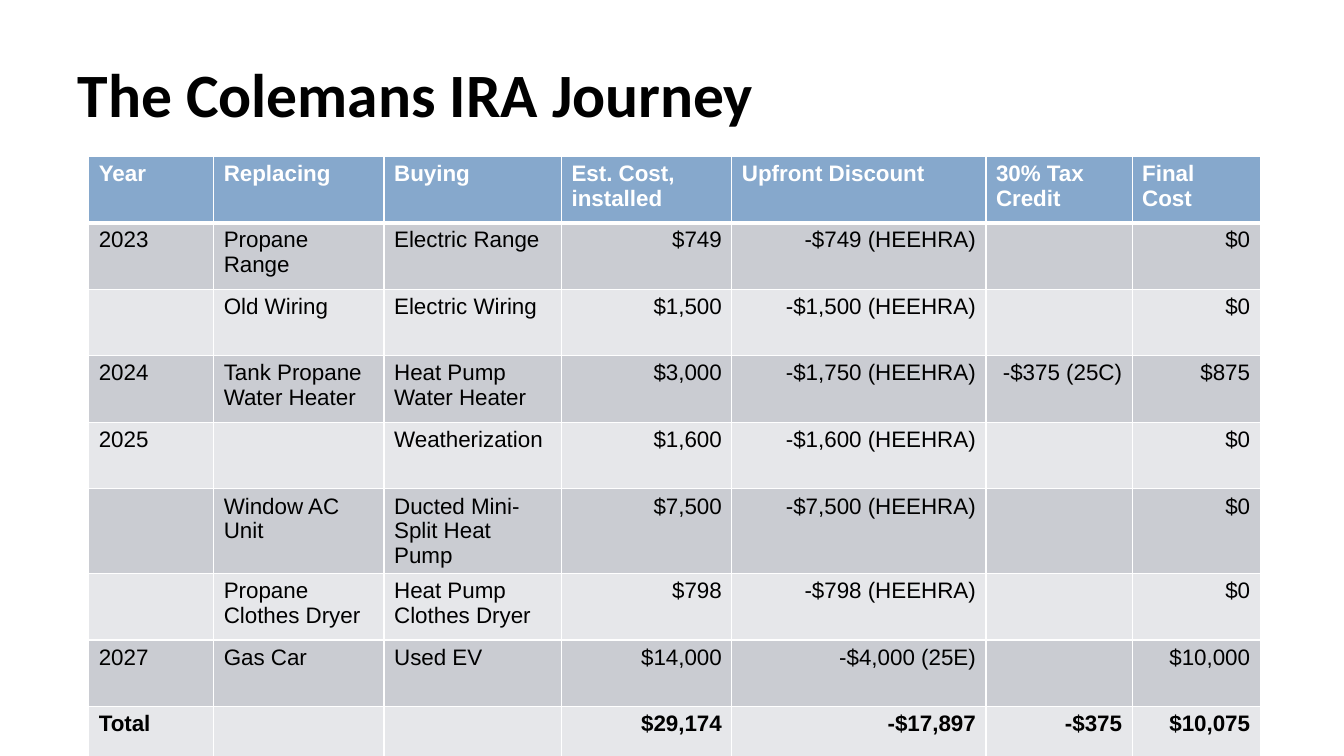
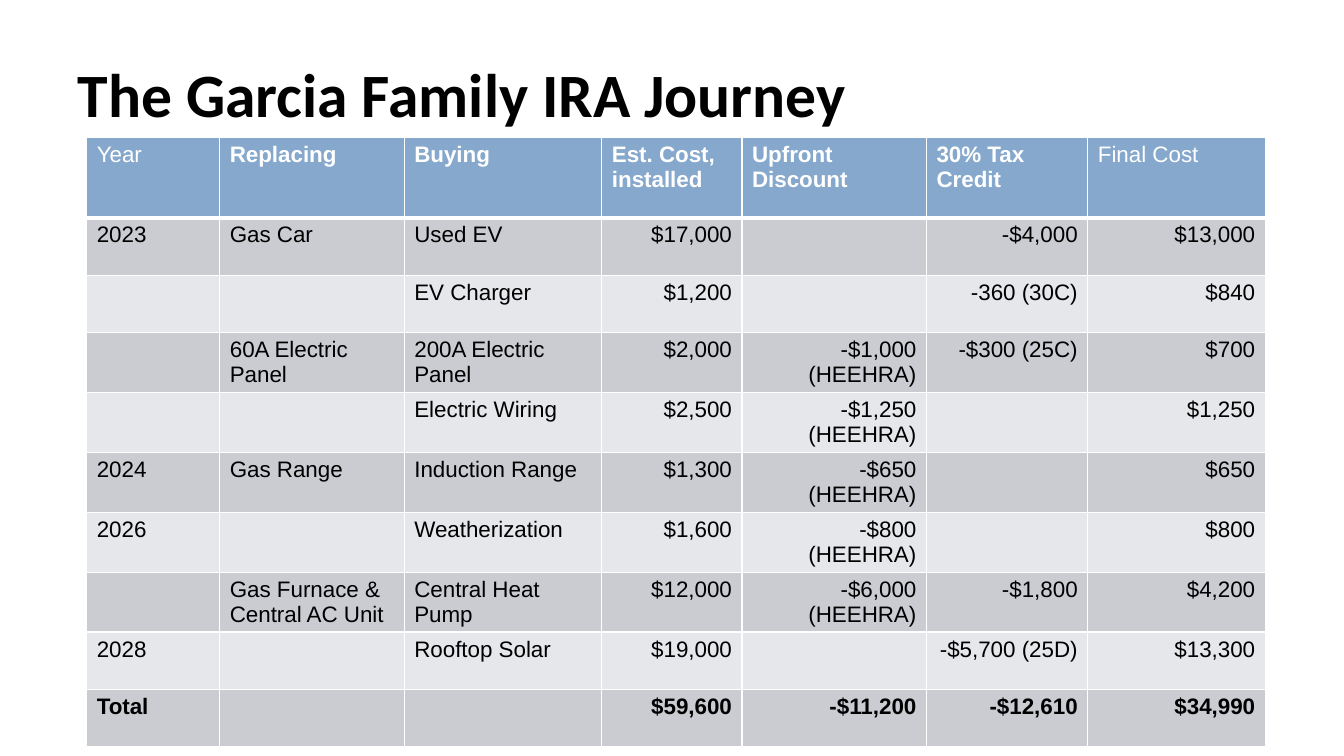
from lxml import etree
from pptx import Presentation
from pptx.dml.color import RGBColor
from pptx.enum.text import MSO_ANCHOR, PP_ALIGN
from pptx.oxml.ns import qn
from pptx.util import Inches, Pt

LEFT, RIGHT = PP_ALIGN.LEFT, PP_ALIGN.RIGHT
MIDDLE = MSO_ANCHOR.MIDDLE

# Shared colours and styles
WHITE = RGBColor(0xFF, 0xFF, 0xFF)
BLACK = RGBColor(0x00, 0x00, 0x00)
HEADER_BLUE = RGBColor(0x86, 0xA8, 0xCC)
BANDS = [RGBColor(0xCA, 0xCC, 0xD2), RGBColor(0xE6, 0xE7, 0xEA)]
TITLE_FONT = {"name": "Calibri", "size": Pt(44), "bold": True}
CELL_FONT = {"name": "Arial", "size": Pt(16)}
TITLE_BOX = {"left": Inches(0.67), "top": Inches(0.3),
             "width": Inches(12), "height": Inches(1.25)}
TITLE_FRAME = {"vertical_anchor": MIDDLE, "word_wrap": True,
               "margin_top": Inches(0.1), "margin_bottom": Inches(0.1)}
THIN, THICK = 1, 3
FIRST_NUMBER_COLUMN = 3

# Content
HEADINGS = ("Year", "Replacing", "Buying", "Est. Cost, installed",
            "Upfront Discount", "30% Tax Credit", "Final Cost")
JOURNEYS = [
    {
        "title": "The Colemans IRA Journey",
        "left": 0.88, "top": 1.55,
        "columns": (1.24, 1.69, 1.76, 1.69, 2.52, 1.45, 1.27),
        "header_height": 0.66, "row_height": 0.66,
        "plain_headings": (),
        "rows": [
            ("2023", "Propane Range", "Electric Range", "$749", "-$749 (HEEHRA)", "", "$0"),
            ("", "Old Wiring", "Electric Wiring", "$1,500", "-$1,500 (HEEHRA)", "", "$0"),
            ("2024", "Tank Propane Water Heater", "Heat Pump Water Heater",
             "$3,000", "-$1,750 (HEEHRA)", "-$375 (25C)", "$875"),
            ("2025", "", "Weatherization", "$1,600", "-$1,600 (HEEHRA)", "", "$0"),
            ("", "Window AC Unit", "Ducted Mini-Split Heat Pump",
             "$7,500", "-$7,500 (HEEHRA)", "", "$0"),
            ("", "Propane Clothes Dryer", "Heat Pump Clothes Dryer",
             "$798", "-$798 (HEEHRA)", "", "$0"),
            ("2027", "Gas Car", "Used EV", "$14,000", "-$4,000 (25E)", "", "$10,000"),
            ("Total", "", "", "$29,174", "-$17,897", "-$375", "$10,075"),
        ],
    },
    {
        "title": "The Garcia Family IRA Journey",
        "left": 0.86, "top": 1.36,
        "columns": (1.32, 1.83, 1.96, 1.39, 1.83, 1.6, 1.76),
        "header_height": 0.8, "row_height": 0.57,
        "plain_headings": ("Year", "Final Cost"),
        "rows": [
            ("2023", "Gas Car", "Used EV", "$17,000", "", "-$4,000", "$13,000"),
            ("", "", "EV Charger", "$1,200", "", "-360 (30C)", "$840"),
            ("", "60A Electric Panel", "200A Electric Panel",
             "$2,000", "-$1,000 (HEEHRA)", "-$300 (25C)", "$700"),
            ("", "", "Electric Wiring", "$2,500", "-$1,250 (HEEHRA)", "", "$1,250"),
            ("2024", "Gas Range", "Induction Range", "$1,300", "-$650 (HEEHRA)", "", "$650"),
            ("2026", "", "Weatherization", "$1,600", "-$800 (HEEHRA)", "", "$800"),
            ("", "Gas Furnace & Central AC Unit", "Central Heat Pump",
             "$12,000", "-$6,000 (HEEHRA)", "-$1,800", "$4,200"),
            ("2028", "", "Rooftop Solar", "$19,000", "", "-$5,700 (25D)", "$13,300"),
            ("Total", "", "", "$59,600", "-$11,200", "-$12,610", "$34,990"),
        ],
    },
]


def apply(target, values):
    for name, value in values.items():
        setattr(target, name, value)


def set_borders(cell, top, bottom):
    """Draw white cell borders; must run before the fill is set."""
    properties = cell._tc.get_or_add_tcPr()
    widths = {"a:lnL": THIN, "a:lnR": THIN, "a:lnT": top, "a:lnB": bottom}
    for tag, points in widths.items():
        line = etree.SubElement(properties, qn(tag), w=str(Pt(points)))
        fill = etree.SubElement(line, qn("a:solidFill"))
        etree.SubElement(fill, qn("a:srgbClr"), val=str(WHITE))


def write_text(text_frame, text, font, color, alignment):
    text_frame.text = text
    paragraph = text_frame.paragraphs[0]
    paragraph.alignment = alignment
    for run in paragraph.runs:
        apply(run.font, font)
        run.font.color.rgb = color


def add_cost_table(slide, journey):
    rows = [HEADINGS] + journey["rows"]
    columns = journey["columns"]
    heights = [journey["header_height"]] + [journey["row_height"]] * len(journey["rows"])
    table = slide.shapes.add_table(
        len(rows), len(columns), Inches(journey["left"]), Inches(journey["top"]),
        Inches(sum(columns)), Inches(sum(heights))).table
    table.horz_banding = False
    for column, width in zip(table.columns, columns):
        column.width = Inches(width)
    for row, height in zip(table.rows, heights):
        row.height = Inches(height)

    for row_index, texts in enumerate(rows):
        header = row_index == 0
        for column_index, text in enumerate(texts):
            cell = table.cell(row_index, column_index)
            set_borders(cell, THICK if row_index == 1 else THIN, THICK if header else THIN)
            cell.fill.solid()
            cell.fill.fore_color.rgb = HEADER_BLUE if header else BANDS[(row_index - 1) % 2]
            if header:
                bold = text not in journey["plain_headings"]
            else:
                bold = texts[0] == "Total"
            number = not header and column_index >= FIRST_NUMBER_COLUMN
            write_text(cell.text_frame, text, {**CELL_FONT, "bold": bold},
                       WHITE if header else BLACK, RIGHT if number else LEFT)


def main():
    presentation = Presentation()
    presentation.slide_width = Inches(13.33)
    presentation.slide_height = Inches(7.5)
    title_only = presentation.slide_layouts[5]
    for placeholder in title_only.placeholders:
        if placeholder.placeholder_format.idx == 0:
            apply(placeholder, TITLE_BOX)

    for journey in JOURNEYS:
        slide = presentation.slides.add_slide(title_only)
        title = slide.shapes.title
        apply(title.text_frame, TITLE_FRAME)
        write_text(title.text_frame, journey["title"], TITLE_FONT, BLACK, LEFT)
        add_cost_table(slide, journey)

    presentation.save("out.pptx")


if __name__ == "__main__":
    main()
